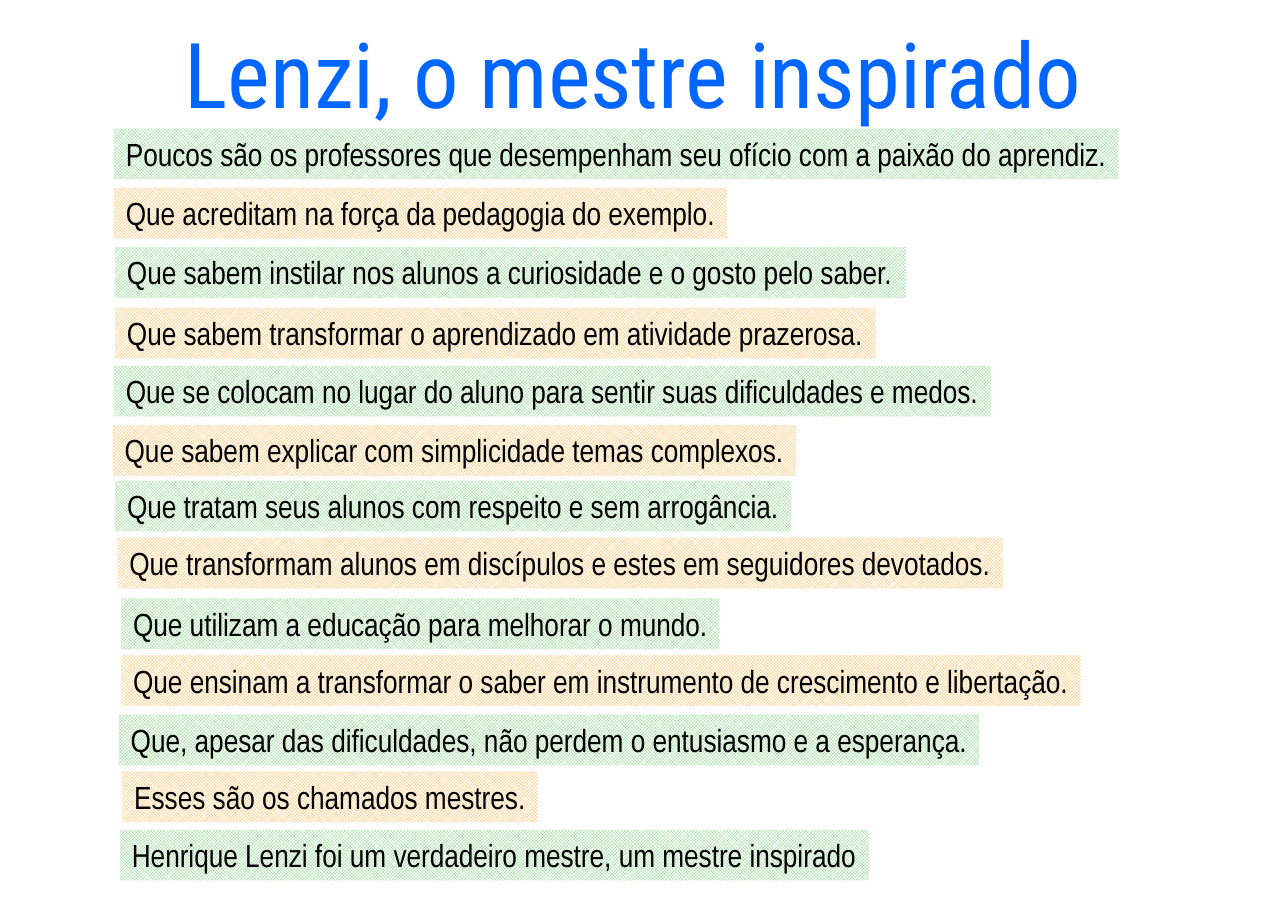
from pptx import Presentation
from pptx.dml.color import RGBColor
from pptx.enum.dml import MSO_PATTERN
from pptx.enum.text import MSO_AUTO_SIZE as AUTO, PP_ALIGN as AL
from pptx.util import Pt

TITLE = dict(name="Roboto Condensed", size=Pt(54))
VERSE = dict(name="Arial Narrow", size=Pt(19))
GREEN, ORANGE = "81D581", "FFBD5B"
VERSE_HEIGHT = 30.2

VERSES = [
    (0.7, 0, 596.9, "Poucos são os professores que desempenham seu ofício com a paixão do aprendiz."),
    (0.7, 35.3, 364.3, "Que acreditam na força da pedagogia do exemplo."),
    (1.4, 70.6, 470.2, "Que sabem instilar nos alunos a curiosidade e o gosto pelo saber."),
    (1.4, 106.6, 452, "Que sabem transformar o aprendizado em atividade prazerosa."),
    (0.7, 141.1, 521.3, "Que se colocam no lugar do aluno para sentir suas dificuldades e medos."),
    (0, 176.4, 406.1, "Que sabem explicar com simplicidade temas complexos."),
    (1.4, 209.5, 401.8, "Que tratam seus alunos com respeito e sem arrogância."),
    (2.8, 243.4, 526.3, "Que transformam alunos em discípulos e estes em seguidores devotados."),
    (5, 279.4, 355.7, "Que utilizam a educação para melhorar o mundo."),
    (5, 313.2, 570.2, "Que ensinam a transformar o saber em instrumento de crescimento e libertação."),
    (3.6, 348.5, 511.2, "Que, apesar das dificuldades, não perdem o entusiasmo e a esperança."),
    (5.7, 382.3, 247, "Esses são os chamados mestres."),
    (4.3, 416.9, 445, "Henrique Lenzi foi um verdadeiro mestre, um mestre inspirado"),
]


def rgb(value):
    return RGBColor.from_string(value)


def add_text(slide, box, text, font, color, align):
    sp = slide.shapes.add_textbox(*map(Pt, box))
    tf = sp.text_frame
    tf.word_wrap = False
    tf.auto_size = AUTO.SHAPE_TO_FIT_TEXT
    tf.margin_right = Pt(6)
    p = tf.paragraphs[0]
    p.alignment = align
    r = p.add_run()
    r.text = text
    for key, value in font.items():
        setattr(r.font, key, value)
    r.font.color.rgb = rgb(color)
    return sp


def add_title(slide, box):
    add_text(slide, box, "Lenzi, o mestre inspirado", TITLE, "0066FF", AL.CENTER)


def add_verses(slide, left, top):
    for i, (dx, dy, width, text) in enumerate(VERSES):
        box = (left + dx, top + dy, width, VERSE_HEIGHT)
        align = AL.LEFT if i else AL.JUSTIFY
        fill = add_text(slide, box, text, VERSE, "000000", align).fill
        fill.patterned()
        fill.pattern = MSO_PATTERN.SMALL_CHECKER_BOARD
        fill.fore_color.rgb = rgb((GREEN, ORANGE)[i % 2])
        fill.back_color.rgb = rgb("FFFFFF")


def main():
    prs = Presentation()
    prs.slide_width, prs.slide_height = Pt(765.4), Pt(538.6)
    slide = prs.slides.add_slide(prs.slide_layouts[6])
    add_title(slide, (95, 7.2, 561.6, 72))
    add_verses(slide, 67, 76.3)
    prs.save("out.pptx")


if __name__ == "__main__":
    main()
